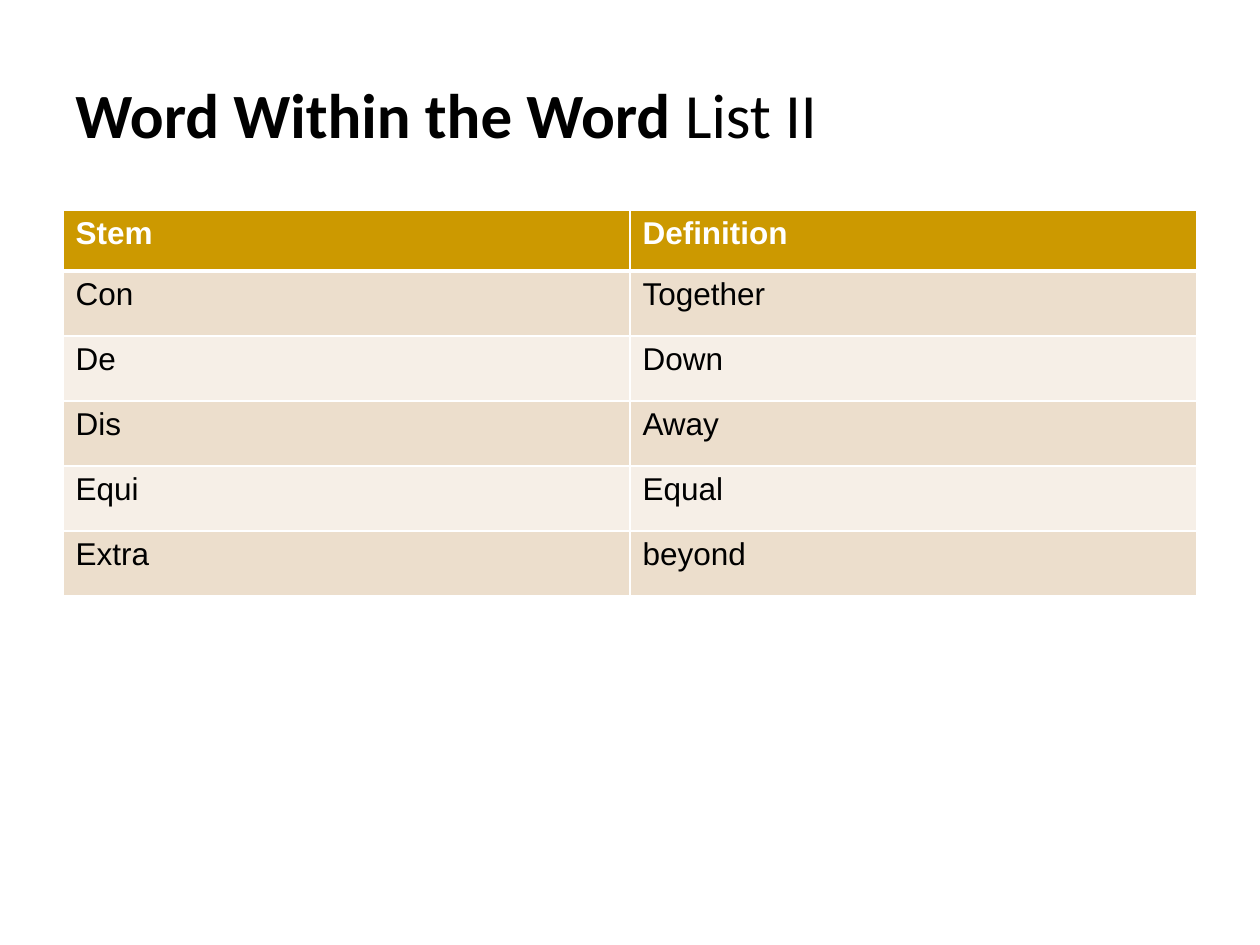
import pptx
import pptx.util
import pptx.dml.color
import pptx.enum.text
import pptx.oxml.ns
from lxml import etree

RGB = pptx.dml.color.RGBColor
WHITE = RGB(0xFF, 0xFF, 0xFF)
BLACK = RGB(0x00, 0x00, 0x00)
GOLD = RGB(0xCC, 0x99, 0x00)
SAND = RGB(0xEC, 0xDE, 0xCC)
CREAM = RGB(0xF6, 0xEF, 0xE7)

SCALE = 914400 // 126
HEAD_H, ROW_H, COL_W = 61, 65, 567

ROWS = [
    ("Stem", "Definition"),
    ("Con", "Together"),
    ("De", "Down"),
    ("Dis", "Away"),
    ("Equi", "Equal"),
    ("Extra", "beyond"),
]


def px(count):
    return pptx.util.Emu(count * SCALE)


def add_run(para, text, size, face, color, bold=False):
    run = para.add_run()
    run.text = text
    font = run.font
    font.size = pptx.util.Pt(size)
    font.name = face
    font.bold = bold
    font.color.rgb = color


def add_title(slide):
    box = slide.shapes.add_textbox(px(63), px(10), px(935), px(147))
    frame = box.text_frame
    frame.word_wrap = True
    frame.vertical_anchor = pptx.enum.text.MSO_ANCHOR.BOTTOM
    para = frame.paragraphs[0]
    add_run(para, "Word Within the Word ", 36, "Calibri", BLACK, True)
    add_run(para, "List II", 36, "Calibri", BLACK)


def add_edge(cell, side, width):
    """Draw one white border; call before the cell is filled."""
    qn = pptx.oxml.ns.qn
    props = cell._tc.get_or_add_tcPr()
    line = etree.SubElement(props, qn(f"a:ln{side}"), w=str(pptx.util.Pt(width)))
    fill = etree.SubElement(line, qn("a:solidFill"))
    etree.SubElement(fill, qn("a:srgbClr"), val=str(WHITE))


def style_cell(cell, text, row):
    head = row == 0
    add_edge(cell, "L", 1)
    add_edge(cell, "R", 1)
    add_edge(cell, "T", 3 if row == 1 else 1)
    add_edge(cell, "B", 3 if head else 1)
    cell.fill.solid()
    cell.fill.fore_color.rgb = GOLD if head else (CREAM, SAND)[row % 2]
    para = cell.text_frame.paragraphs[0]
    add_run(para, text, 18, "Arial", WHITE if head else BLACK, head)


def add_stems(slide):
    count, width = len(ROWS), len(ROWS[0])
    height = HEAD_H + ROW_H * (count - 1)
    frame = slide.shapes.add_table(
        count, width, px(63), px(210), px(COL_W * width), px(height))
    table = frame.table
    for col in table.columns:
        col.width = px(COL_W)
    for row, texts in enumerate(ROWS):
        table.rows[row].height = px(ROW_H if row else HEAD_H)
        for col, text in enumerate(texts):
            style_cell(table.cell(row, col), text, row)


def main():
    deck = pptx.Presentation()
    deck.slide_width, deck.slide_height = px(1260), px(945)
    slide = deck.slides.add_slide(deck.slide_layouts[6])
    add_title(slide)
    add_stems(slide)
    deck.save("out.pptx")


if __name__ == "__main__":
    main()
